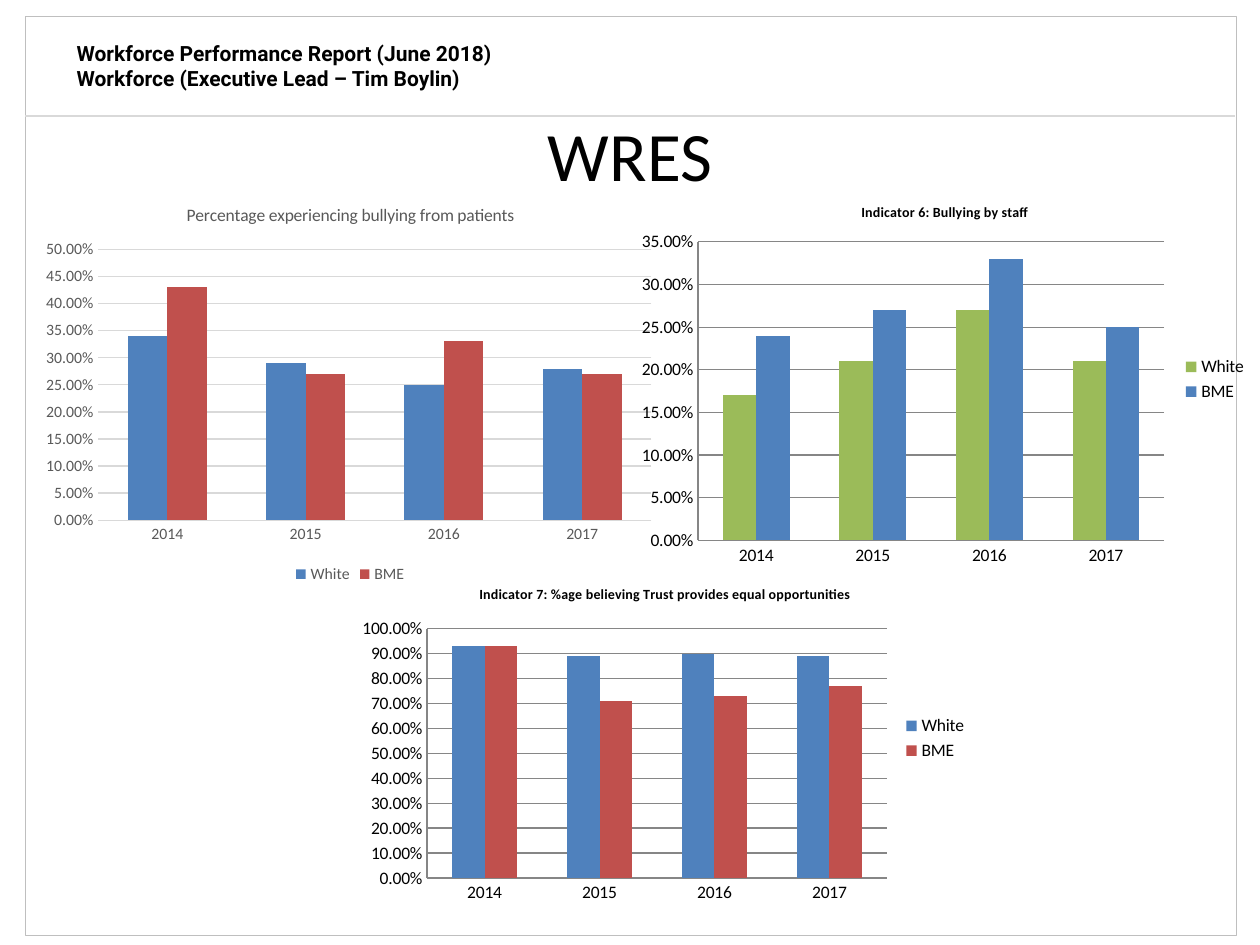
import pptx
import pptx.chart.data
import pptx.dml.color
import pptx.enum.chart
import pptx.enum.shapes
import pptx.enum.text
import pptx.oxml
import pptx.oxml.ns
import pptx.util

Inches = pptx.util.Inches
Pt = pptx.util.Pt

COLOURS = {
    "black": "000000", "grey_text": "595959", "axis": "868686",
    "frame": "BFBFBF", "rule": "D9D9D9",
    "blue": "4F81BD", "red": "C0504D", "green": "9BBB59",
}
YEARS = ["2014", "2015", "2016", "2017"]


def colour(name):
    return pptx.dml.color.RGBColor.from_string(COLOURS[name])


class Report:
    """Holds the style and the current slide."""

    def __init__(self, page):
        self.page = page

    def style_font(self, font, size, name="Calibri", tone="black", bold=False):
        formats = {"size": Pt(size), "name": name, "bold": bold}
        for key, value in formats.items():
            setattr(font, key, value)
        font.color.rgb = colour(tone)

    def style_line(self, line, tone, width):
        line.color.rgb = colour(tone)
        line.width = Pt(width)

    def frame(self, *area):
        box = self.page.shapes.add_shape(
            pptx.enum.shapes.MSO_SHAPE.RECTANGLE, *map(Inches, area))
        box.shadow.inherit = False
        box.fill.background()
        self.style_line(box.line, "frame", 0.25)

    def rule(self, left, right, top):
        line = self.page.shapes.add_connector(
            pptx.enum.shapes.MSO_CONNECTOR.STRAIGHT,
            Inches(left), Inches(top), Inches(right), Inches(top))
        line._element.spPr.append(pptx.oxml.parse_xml(
            f'<a:effectLst {pptx.oxml.ns.nsdecls("a")}/>'))
        self.style_line(line.line, "rule", 0.75)

    def header(self, text, *area):
        box = self.page.shapes.add_textbox(*map(Inches, area))
        box.text_frame.word_wrap = True
        para = box.text_frame.paragraphs[0]
        para.text = text
        for span in para.runs:
            self.style_font(span.font, 12, "Roboto", bold=True)

    def title(self, text, *area):
        box = self.page.shapes.title
        box.left, box.top, box.width, box.height = map(Inches, area)
        formats = {
            "vertical_anchor": pptx.enum.text.MSO_ANCHOR.BOTTOM,
            "auto_size": pptx.enum.text.MSO_AUTO_SIZE.NONE,
            "margin_top": 0, "margin_bottom": 0,
        }
        for key, value in formats.items():
            setattr(box.text_frame, key, value)
        para = box.text_frame.paragraphs[0]
        para.alignment = pptx.enum.text.PP_ALIGN.CENTER
        span = para.add_run()
        span.text = text
        self.style_font(span.font, 39.6)

    def place_plot(self, chart, area, plot):
        """Set the inner plot area, given in inches on the slide."""
        left, top, width, height = area
        shares = {
            "x": (plot[0] - left) / width, "y": (plot[1] - top) / height,
            "w": plot[2] / width, "h": plot[3] / height,
        }
        values = "".join(f'<c:{key} val="{share:.4f}"/>' for key, share in shares.items())
        plot_area = chart._chartSpace.chart.plotArea
        for old in plot_area.findall(pptx.oxml.ns.qn("c:layout")):
            plot_area.remove(old)
        plot_area.insert(0, pptx.oxml.parse_xml(
            f'<c:layout {pptx.oxml.ns.nsdecls("c")}><c:manualLayout>'
            '<c:layoutTarget val="inner"/><c:xMode val="edge"/><c:yMode val="edge"/>'
            f'{values}</c:manualLayout></c:layout>'))

    def column_chart(self, title, area, plot, series, top_value, step, light=False):
        data = pptx.chart.data.CategoryChartData(number_format="0%")
        data.categories = YEARS
        for name, _, values in series:
            data.add_series(name, values)
        chart = self.page.shapes.add_chart(
            pptx.enum.chart.XL_CHART_TYPE.COLUMN_CLUSTERED,
            *map(Inches, area), data).chart
        tone, size = ("grey_text", 9) if light else ("black", 10)
        self.style_font(chart.font, size, tone=tone)
        self.place_plot(chart, area, plot)

        # Title and legend
        chart.has_title = True
        para = chart.chart_title.text_frame.paragraphs[0]
        span = para.add_run()
        span.text = title
        self.style_font(span.font, 10 if light else 8, tone=tone, bold=not light)
        chart.chart_title.include_in_layout = False
        chart.has_legend = True
        sides = pptx.enum.chart.XL_LEGEND_POSITION
        chart.legend.position = sides.BOTTOM if light else sides.RIGHT
        chart.legend.include_in_layout = False
        self.style_font(chart.legend.font, size, tone=tone)

        # Axes
        for axis in (chart.category_axis, chart.value_axis):
            axis.major_tick_mark = pptx.enum.chart.XL_TICK_MARK.NONE
            axis.minor_tick_mark = pptx.enum.chart.XL_TICK_MARK.NONE
            self.style_font(axis.tick_labels.font, size, tone=tone)
            if light:
                axis.format.line.fill.background()
            else:
                self.style_line(axis.format.line, "axis", 0.75)
        scale = {"minimum_scale": 0, "maximum_scale": top_value,
                 "major_unit": step, "has_major_gridlines": True}
        for key, value in scale.items():
            setattr(chart.value_axis, key, value)
        labels = chart.value_axis.tick_labels
        labels.number_format = "0.00%"
        labels.number_format_is_linked = False
        self.style_line(chart.value_axis.major_gridlines.format.line,
                        "rule" if light else "axis", 0.75)

        # Columns
        columns = chart.plots[0]
        columns.vary_by_categories = False
        columns.gap_width = 150
        columns.overlap = 0
        for column, (_, tone, _) in zip(columns.series, series):
            column.format.fill.solid()
            column.format.fill.fore_color.rgb = colour(tone)


def main():
    deck = pptx.Presentation()
    deck.slide_width, deck.slide_height = Inches(10), Inches(7.5)
    report = Report(deck.slides.add_slide(deck.slide_layouts[5]))

    # Page header and frame
    report.header("Workforce Performance Report (June 2018)\v"
                  "Workforce (Executive Lead – Tim Boylin)", 0.51, 0.27, 5, 0.5)
    report.frame(0.2, 0.13, 9.61, 7.29)
    report.rule(0.2, 9.8, 0.92)
    report.title("WRES", 0.5, 1.47, 9, 0.08)

    # Indicator charts
    report.column_chart(
        "Percentage experiencing bullying from patients",
        (0.28, 1.47, 5, 3.2), (0.78, 1.98, 4.39, 2.15),
        [("White", "blue", (0.34, 0.29, 0.25, 0.28)),
         ("BME", "red", (0.43, 0.27, 0.33, 0.27))], 0.5, 0.05, light=True)
    report.column_chart(
        "Indicator 6: Bullying by staff",
        (5, 1.47, 5, 3.08), (5.54, 1.92, 3.7, 2.37),
        [("White", "green", (0.17, 0.21, 0.27, 0.21)),
         ("BME", "blue", (0.24, 0.27, 0.33, 0.25))], 0.35, 0.05)
    report.column_chart(
        "Indicator 7: %age believing Trust provides equal opportunities",
        (2.78, 4.51, 5, 2.7), (3.39, 4.99, 3.65, 1.98),
        [("White", "blue", (0.93, 0.89, 0.9, 0.89)),
         ("BME", "red", (0.93, 0.71, 0.73, 0.77))], 1, 0.1)

    deck.save("out.pptx")


if __name__ == "__main__":
    main()
